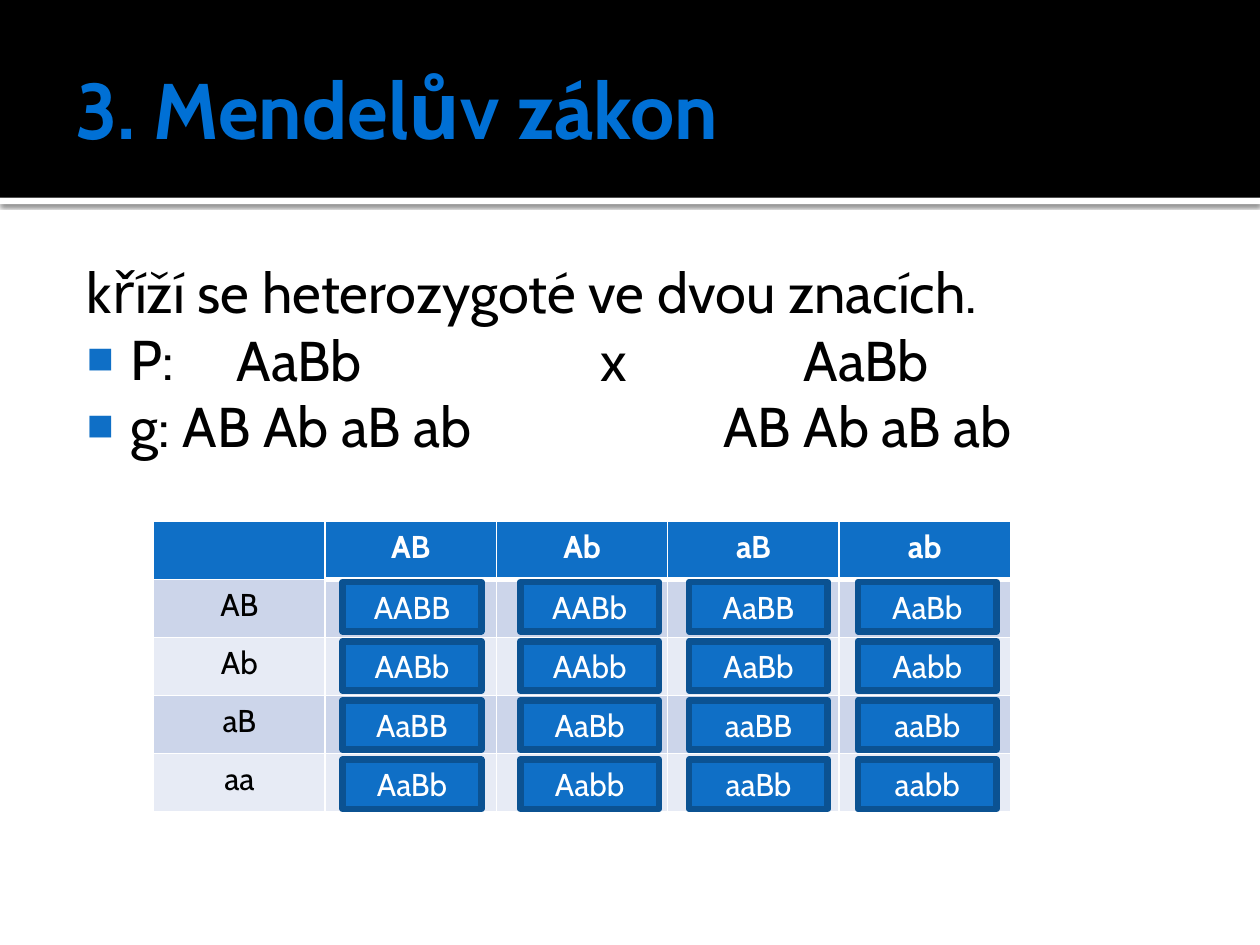
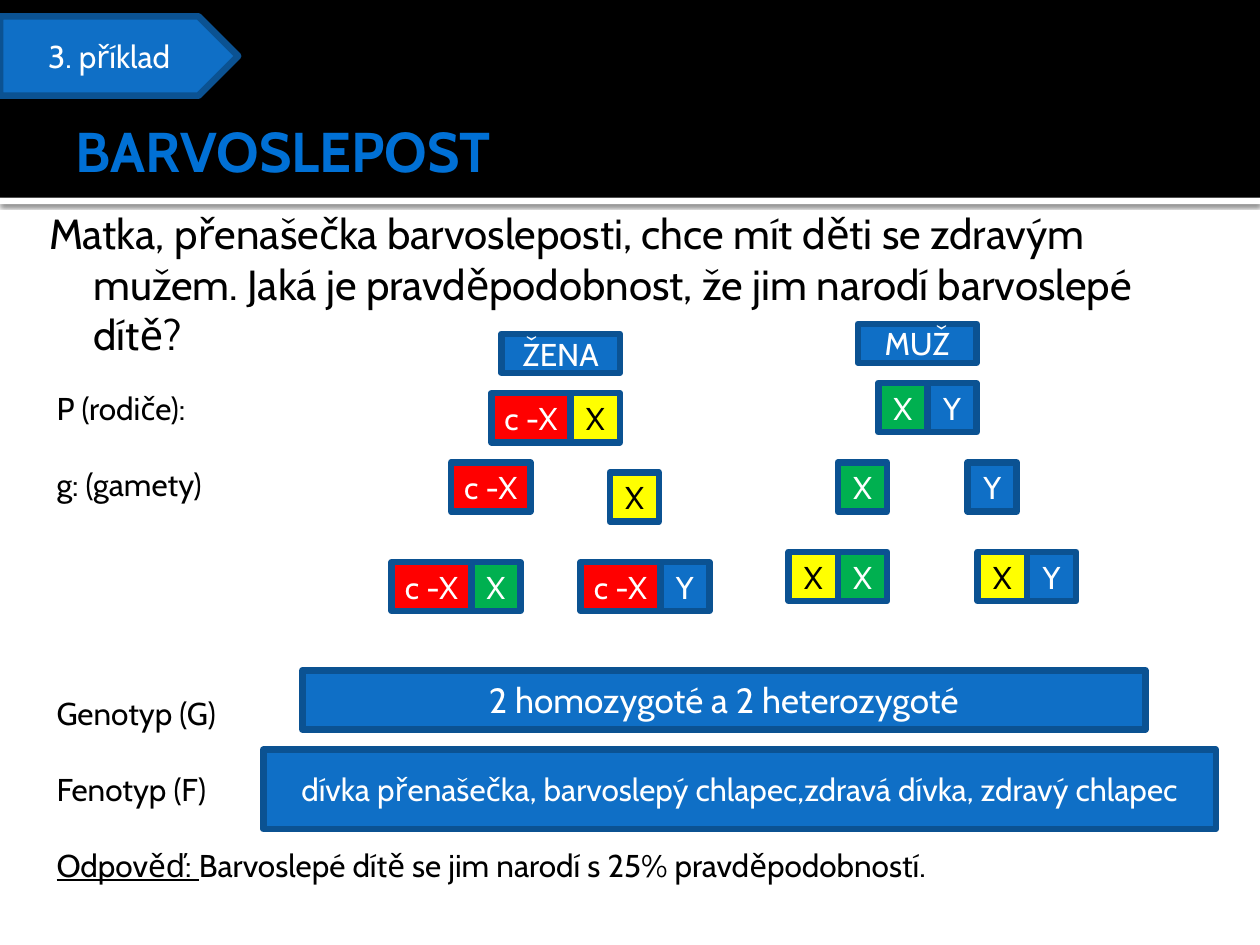
from lxml import etree
from pptx import Presentation
from pptx.dml.color import RGBColor
from pptx.enum.shapes import MSO_SHAPE
from pptx.enum.text import MSO_ANCHOR, PP_ALIGN
from pptx.oxml.ns import qn
from pptx.util import Inches, Pt

RECTANGLE = MSO_SHAPE.RECTANGLE
PENTAGON = MSO_SHAPE.PENTAGON
TOP = MSO_ANCHOR.TOP
MIDDLE = MSO_ANCHOR.MIDDLE
LEFT = PP_ALIGN.LEFT
CENTER = PP_ALIGN.CENTER

FONT = "Cabin"
BLACK = "000000"
WHITE = "FFFFFF"
BLUE = "0F6FC6"
OUTLINE = "0B5292"
TITLE_BLUE = "0070D5"
RED = "FF0000"
YELLOW = "FFFF00"
GREEN = "00B050"
ROW_COLORS = ["E7EBF5", "CCD5EA"]

BODY_INSETS = (0.06, 0.1, 0.1, 0.05)
TITLE_INSETS = (0.1, 0.05, 0.05, 0.05)
TEXT_INSETS = (0.1, 0.05, 0.1, 0.05)
NO_INSETS = (0, 0, 0, 0)

GAMETES = ["AB", "Ab", "aB", "ab"]
CHROMOSOMES = {
    "carrier": ("c -X", 0.63, RED, WHITE),
    "mother": ("X", 0.39, YELLOW, BLACK),
    "father": ("X", 0.39, GREEN, WHITE),
    "Y": ("Y", 0.39, BLUE, WHITE),
}


def rgb(color):
    return RGBColor.from_string(color)


def add_child(parent, tag, **attributes):
    child = etree.SubElement(parent, qn(tag))
    for name, value in attributes.items():
        child.set(name, str(value))
    return child


def add_color(parent, color):
    return add_child(parent, "a:srgbClr", val=color)


def write_text(paragraph, text, size=18, color=BLACK, bold=False, underline=False,
               align=LEFT, space_before=0):
    paragraph.alignment = align
    paragraph.space_before = Pt(space_before)
    run = paragraph.add_run()
    run.text = text
    run.font.name = FONT
    run.font.size = Pt(size)
    run.font.bold = bold
    run.font.underline = underline
    run.font.color.rgb = rgb(color)


def hang(paragraph, bullet=False):
    properties = paragraph._p.get_or_add_pPr()
    properties.set("marL", str(Inches(0.48)))
    properties.set("indent", str(Inches(-0.35)))
    if bullet:
        add_color(add_child(properties, "a:buClr"), BLUE)
        add_child(properties, "a:buSzPct", val=80000)
        add_child(properties, "a:buFont", typeface="Arial")
        add_child(properties, "a:buChar", char="■")


def cross(first, second):
    return "".join("".join(sorted(pair)) for pair in zip(first, second))


class Deck:
    def __init__(self):
        self.presentation = Presentation()
        self.presentation.slide_width = Inches(10)
        self.presentation.slide_height = Inches(7.5)
        self.slide = None

    def new_slide(self, title, top, height, size):
        self.slide = self.presentation.slides.add_slide(self.presentation.slide_layouts[6])
        self.add_shadow(self.box(0, 1.57, 10, 0.05, WHITE, outline=None))
        self.box(0, 0, 10, 1.57, BLACK, outline=None)
        frame = self.text_frame(0.5, top, 9, height, TITLE_INSETS, MIDDLE)
        write_text(frame.paragraphs[0], title, size=size, color=TITLE_BLUE, bold=True)

    def add_shadow(self, shape):
        effects = shape._element.spPr.find(qn("a:effectLst"))
        shadow = add_child(effects, "a:outerShdw", blurRad=Pt(2.5), dist=Pt(0.8),
                           dir=90 * 60000, algn="tl", rotWithShape=0)
        add_child(add_color(shadow, BLACK), "a:alpha", val=60000)

    def box(self, left, top, width, height, fill=BLUE, text="", color=WHITE, size=18,
            outline=OUTLINE, kind=RECTANGLE):
        shape = self.slide.shapes.add_shape(
            kind, Inches(left), Inches(top), Inches(width), Inches(height))
        shape.shadow.inherit = False
        shape.fill.solid()
        shape.fill.fore_color.rgb = rgb(fill)
        if outline:
            shape.line.color.rgb = rgb(outline)
            shape.line.width = Pt(3.78)
        else:
            shape.line.fill.background()
        if text:
            self.format_frame(shape.text_frame, NO_INSETS, MIDDLE)
            write_text(shape.text_frame.paragraphs[0], text, size=size, color=color,
                       align=CENTER)
        return shape

    def format_frame(self, frame, insets, anchor):
        frame.word_wrap = True
        frame.vertical_anchor = anchor
        (frame.margin_left, frame.margin_top,
         frame.margin_right, frame.margin_bottom) = map(Inches, insets)

    def text_frame(self, left, top, width, height, insets=TEXT_INSETS, anchor=TOP):
        frame = self.slide.shapes.add_textbox(
            Inches(left), Inches(top), Inches(width), Inches(height)).text_frame
        self.format_frame(frame, insets, anchor)
        return frame

    def label(self, left, top, width, text, **style):
        frame = self.text_frame(left, top, width, 0.53, NO_INSETS)
        write_text(frame.paragraphs[0], text, **style)

    def chromosomes(self, left, top, names):
        for name in names:
            text, width, fill, color = CHROMOSOMES[name]
            self.box(left, top, width, 0.39, fill, text, color)
            left += width

    def cell_borders(self, cell, bottom):
        properties = cell._tc.get_or_add_tcPr()
        widths = {"a:lnL": 1, "a:lnR": 1, "a:lnT": 1, "a:lnB": bottom}
        for index, (tag, width) in enumerate(widths.items()):
            line = etree.Element(qn(tag), w=str(Pt(width)))
            add_color(add_child(line, "a:solidFill"), WHITE)
            properties.insert(index, line)

    def table(self, left, top, column_width, row_height, rows):
        columns = len(rows[0])
        table = self.slide.shapes.add_table(
            len(rows), columns, Inches(left), Inches(top),
            Inches(column_width * columns), Inches(row_height * len(rows))).table
        for column in table.columns:
            column.width = Inches(column_width)
        for row_index, row in enumerate(rows):
            table.rows[row_index].height = Inches(row_height)
            header = row_index == 0
            for column_index, text in enumerate(row):
                cell = table.cell(row_index, column_index)
                cell.fill.solid()
                cell.fill.fore_color.rgb = rgb(BLUE if header else ROW_COLORS[row_index % 2])
                if row_index or column_index:
                    self.cell_borders(cell, bottom=3 if header else 1)
                if text:
                    write_text(cell.text_frame.paragraphs[0], text, bold=header,
                               color=WHITE if header else BLACK, align=CENTER)


def build_mendel_law(deck):
    deck.new_slide("3. Mendelův zákon", top=0.17, height=1.37, size=45)
    frame = deck.text_frame(0.5, 1.94, 9, 5.06, BODY_INSETS)
    lines = ["kříží se heterozygoté ve dvou znacích.", "P:", "g: AB Ab aB ab"]
    for index, text in enumerate(lines):
        paragraph = frame.add_paragraph() if index else frame.paragraphs[0]
        write_text(paragraph, text, size=32)
        hang(paragraph, bullet=index > 0)
    for left, width, text in [(1.88, 1.2, "AaBb"), (4.77, 0.4, "x"), (6.38, 1.2, "AaBb")]:
        deck.label(left, 2.58, width, text, size=32)
    deck.label(5.74, 3.11, 3, "AB Ab aB ab", size=32)

    row_headers = ["AB", "Ab", "aB", "aa"]
    deck.table(1.22, 4.14, 1.36, 0.46,
               [["", *GAMETES]] + [[header, "", "", "", ""] for header in row_headers])
    for row, first in enumerate(GAMETES):
        for left, second in zip([2.72, 4.13, 5.47, 6.81], GAMETES):
            deck.box(left, 4.62 + 0.47 * row, 1.1, 0.39, text=cross(first, second))


def build_color_blindness(deck):
    deck.new_slide("BARVOSLEPOST", top=0.84, height=0.7, size=32)
    question = deck.text_frame(0.2, 1.55, 9.61, 1.42, BODY_INSETS).paragraphs[0]
    write_text(question, "Matka, přenašečka barvosleposti, chce mít děti se zdravým mužem. "
               "Jaká je pravděpodobnost, že jim narodí barvoslepé dítě?", size=24)
    hang(question)

    frame = deck.text_frame(0.35, 3.04, 9.45, 4.04)
    write_text(frame.paragraphs[0], "P (rodiče):")
    line_height = 21.8
    for text, skipped_lines in [("g: (gamety)", 1), ("Genotyp (G)", 5), ("Fenotyp (F)", 1)]:
        write_text(frame.add_paragraph(), text, space_before=skipped_lines * line_height)
    answer = frame.add_paragraph()
    write_text(answer, "Odpověď: ", underline=True)
    write_text(answer, "Barvoslepé dítě se jim narodí s 25% pravděpodobností.",
               space_before=line_height)

    parents = [(3.9, 3.12, ["carrier", "mother"]), (6.97, 3.04, ["father", "Y"])]
    gametes = [(3.58, 3.67, ["carrier"]), (4.84, 3.75, ["mother"]),
               (6.65, 3.67, ["father"]), (7.68, 3.67, ["Y"])]
    children = [(3.11, 4.46, ["carrier", "father"]), (4.61, 4.46, ["carrier", "Y"]),
                (6.26, 4.38, ["mother", "father"]), (7.76, 4.38, ["mother", "Y"])]
    for left, top, names in parents + gametes + children:
        deck.chromosomes(left, top, names)

    deck.box(2.09, 5.95, 7.56, 0.63,
             text="dívka přenašečka, barvoslepý chlapec,zdravá dívka, zdravý chlapec")
    deck.box(2.4, 5.32, 6.69, 0.47, text="2 homozygoté a 2 heterozygoté", size=20)
    deck.box(3.98, 2.65, 0.94, 0.31, text="ŽENA")
    deck.box(6.81, 2.57, 0.94, 0.31, text="MUŽ")
    deck.box(0, 0.13, 1.89, 0.63, text="3. příklad", kind=PENTAGON)


def main():
    deck = Deck()
    build_mendel_law(deck)
    build_color_blindness(deck)
    deck.presentation.save("out.pptx")


if __name__ == "__main__":
    main()
